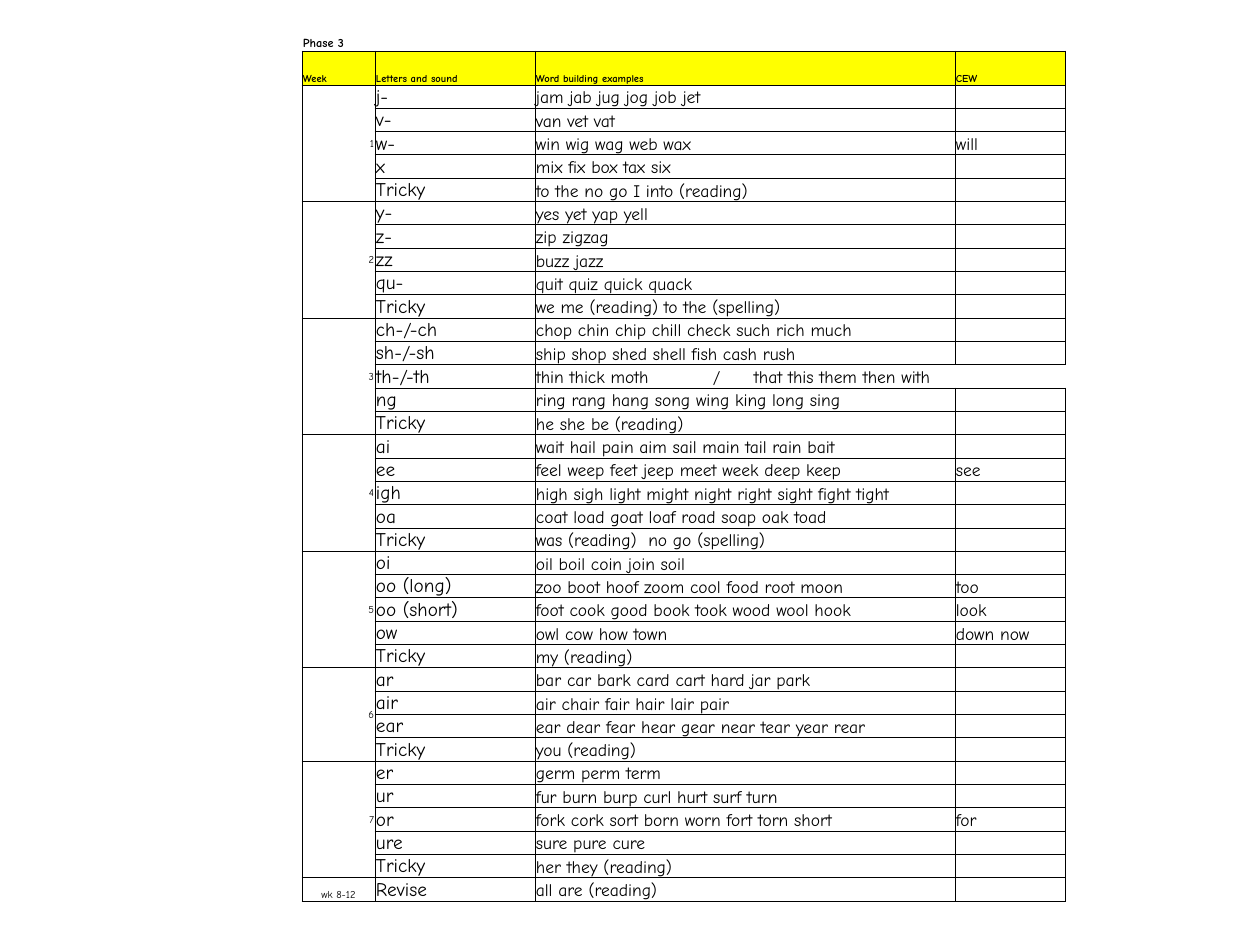
from dataclasses import dataclass

from lxml import etree
from pptx import Presentation
from pptx import util as u
from pptx.dml.color import RGBColor
from pptx.enum import text
from pptx.oxml import ns

PX = 914400 // 126  # EMU in one px


@dataclass(frozen=True)
class Theme:
    font: str = "Comic Neue"
    ink: str = "000000"
    header: str = "FFFF00"
    title: int = 7
    small: int = 6
    sound: int = 11
    words: int = 10
    border: float = 0.5


THEME = Theme()
NO_STYLE = "{2D5ABB26-0587-4C30-8999-92F81FD0307C}"
LEFT, TOP = 302, 26
COLUMNS = [73, 160, 420, 111]
TITLE_H, HEADER_H, ROW_H = 25, 34, 23
TAB_STOPS = [177, 218]
HEADINGS = ["Week", "Letters and sound", "Word building examples", "CEW"]

# Each week: label, then rows of sound, word examples and, if any, CEW
WEEKS = [
    ("1", [("j-", "jam jab jug jog job jet"),
           ("v-", "van vet vat"),
           ("w-", "win wig wag web wax", "will"),
           ("x", "mix fix box tax six"),
           ("Tricky", "to the no go I into (reading)")]),
    ("2", [("y-", "yes yet yap yell"),
           ("z-", "zip zigzag"),
           ("zz", "buzz jazz"),
           ("qu-", "quit quiz quick quack"),
           ("Tricky", "we me (reading) to the (spelling)")]),
    ("3", [("ch-/-ch", "chop chin chip chill check such rich much"),
           ("sh-/-sh", "ship shop shed shell fish cash rush"),
           ("th-/-th", "thin thick moth\t/\tthat this them then with"),
           ("ng", "ring rang hang song wing king long sing"),
           ("Tricky", "he she be (reading)")]),
    ("4", [("ai", "wait hail pain aim sail main tail rain bait"),
           ("ee", "feel weep feet jeep meet week deep keep", "see"),
           ("igh", "high sigh light might night right sight fight tight"),
           ("oa", "coat load goat loaf road soap oak toad"),
           ("Tricky", "was (reading)  no go (spelling)")]),
    ("5", [("oi", "oil boil coin join soil"),
           ("oo (long)", "zoo boot hoof zoom cool food root moon", "too"),
           ("oo (short)", "foot cook good book took wood wool hook", "look"),
           ("ow", "owl cow how town", "down now"),
           ("Tricky", "my (reading)")]),
    ("6", [("ar", "bar car bark card cart hard jar park"),
           ("air", "air chair fair hair lair pair"),
           ("ear", "ear dear fear hear gear near tear year rear"),
           ("Tricky", "you (reading)")]),
    ("7", [("er", "germ perm term"),
           ("ur", "fur burn burp curl hurt surf turn"),
           ("or", "fork cork sort born worn fort torn short", "for"),
           ("ure", "sure pure cure"),
           ("Tricky", "her they (reading)")]),
    ("wk 8-12", [("Revise", "all are (reading)")]),
]


def px(n):
    return u.Emu(n * PX)


def set_attrs(obj, **values):
    for name, value in values.items():
        setattr(obj, name, value)


def add_borders(cell, sides):
    tc_pr = cell._tc.get_or_add_tcPr()
    for side in sides:
        ln = etree.SubElement(tc_pr, ns.qn(f"a:ln{side}"), w=str(u.Pt(THEME.border)))
        fill = etree.SubElement(ln, ns.qn("a:solidFill"))
        etree.SubElement(fill, ns.qn("a:srgbClr"), val=THEME.ink)


def add_tabs(p, stops):
    tabs = etree.SubElement(p._p.get_or_add_pPr(), ns.qn("a:tabLst"))
    for stop in stops:
        etree.SubElement(tabs, ns.qn("a:tab"), pos=str(px(stop)), algn="l")


def format_cell(cell, sides="LRTB", fill=None):
    """Give a cell its margins, borders and fill, and keep it low while empty."""
    set_attrs(cell, margin_left=px(1), margin_right=px(1), margin_top=px(1),
              margin_bottom=0, vertical_anchor=text.MSO_ANCHOR.BOTTOM)
    add_borders(cell, sides)
    if fill:
        cell.fill.solid()
        cell.fill.fore_color.rgb = RGBColor.from_string(fill)
    else:
        cell.fill.background()
    p = cell.text_frame.paragraphs[0]
    etree.SubElement(p._p, ns.qn("a:endParaRPr"), sz=str(THEME.small * 100))


def write(cell, words, size, bold=False, align=text.PP_ALIGN.LEFT):
    p = cell.text_frame.paragraphs[0]
    p.alignment = align
    r = p.add_run()
    r.text = words
    set_attrs(r.font, name=THEME.font, size=u.Pt(size), bold=bold)
    r.font.color.rgb = RGBColor.from_string(THEME.ink)
    return p


def add_grid(s, count):
    heights = [TITLE_H, HEADER_H] + [ROW_H] * count
    frame = s.shapes.add_table(len(heights), len(COLUMNS), px(LEFT), px(TOP),
                               px(sum(COLUMNS)), px(sum(heights)))
    table = frame.table
    set_attrs(table, first_row=False, horz_banding=False)
    table._tbl.tblPr.find(ns.qn("a:tableStyleId")).text = NO_STYLE
    for column, width in zip(table.columns, COLUMNS):
        column.width = px(width)
    for row, height in zip(table.rows, heights):
        row.height = px(height)
    return table


def fill_headings(table):
    # Title row has only the line below it
    for col, heading in enumerate(HEADINGS):
        format_cell(table.cell(0, col), "B")
        format_cell(table.cell(1, col), fill=THEME.header)
        write(table.cell(1, col), heading, THEME.small, bold=True)
    write(table.cell(0, 0), "Phase 3", THEME.title, bold=True)
    table.cell(0, 0).merge(table.cell(0, 1))


def fill_row(table, row, sound, words, cew=None):
    wide = "\t" in words
    for col, sides in ((1, "LRTB"), (2, "LTB" if wide else "LRTB"),
                       (3, "RTB" if wide else "LRTB")):
        format_cell(table.cell(row, col), sides)
    write(table.cell(row, 1), sound, THEME.sound)
    p = write(table.cell(row, 2), words, THEME.words)
    if cew:
        write(table.cell(row, 3), cew, THEME.words)
    if wide:
        add_tabs(p, TAB_STOPS)
        table.cell(row, 2).merge(table.cell(row, 3))


def fill_week(table, top, label, rows):
    for i, entry in enumerate(rows):
        format_cell(table.cell(top + i, 0), "LR" if i else "LRTB")
        fill_row(table, top + i, *entry)
    cell = table.cell(top, 0)
    numbered = label.isdigit()
    write(cell, label, THEME.small,
          align=text.PP_ALIGN.RIGHT if numbered else text.PP_ALIGN.CENTER)
    if numbered:
        cell.vertical_anchor = text.MSO_ANCHOR.MIDDLE
        cell.merge(table.cell(top + len(rows) - 1, 0))


def main():
    prs = Presentation()
    set_attrs(prs, slide_width=u.Inches(10), slide_height=u.Inches(7.5))
    s = prs.slides.add_slide(prs.slide_layouts[6])
    table = add_grid(s, sum(len(rows) for _, rows in WEEKS))
    fill_headings(table)
    # Weeks follow one another below the headings
    top = 2
    for label, rows in WEEKS:
        fill_week(table, top, label, rows)
        top += len(rows)
    prs.save("out.pptx")


if __name__ == "__main__":
    main()
